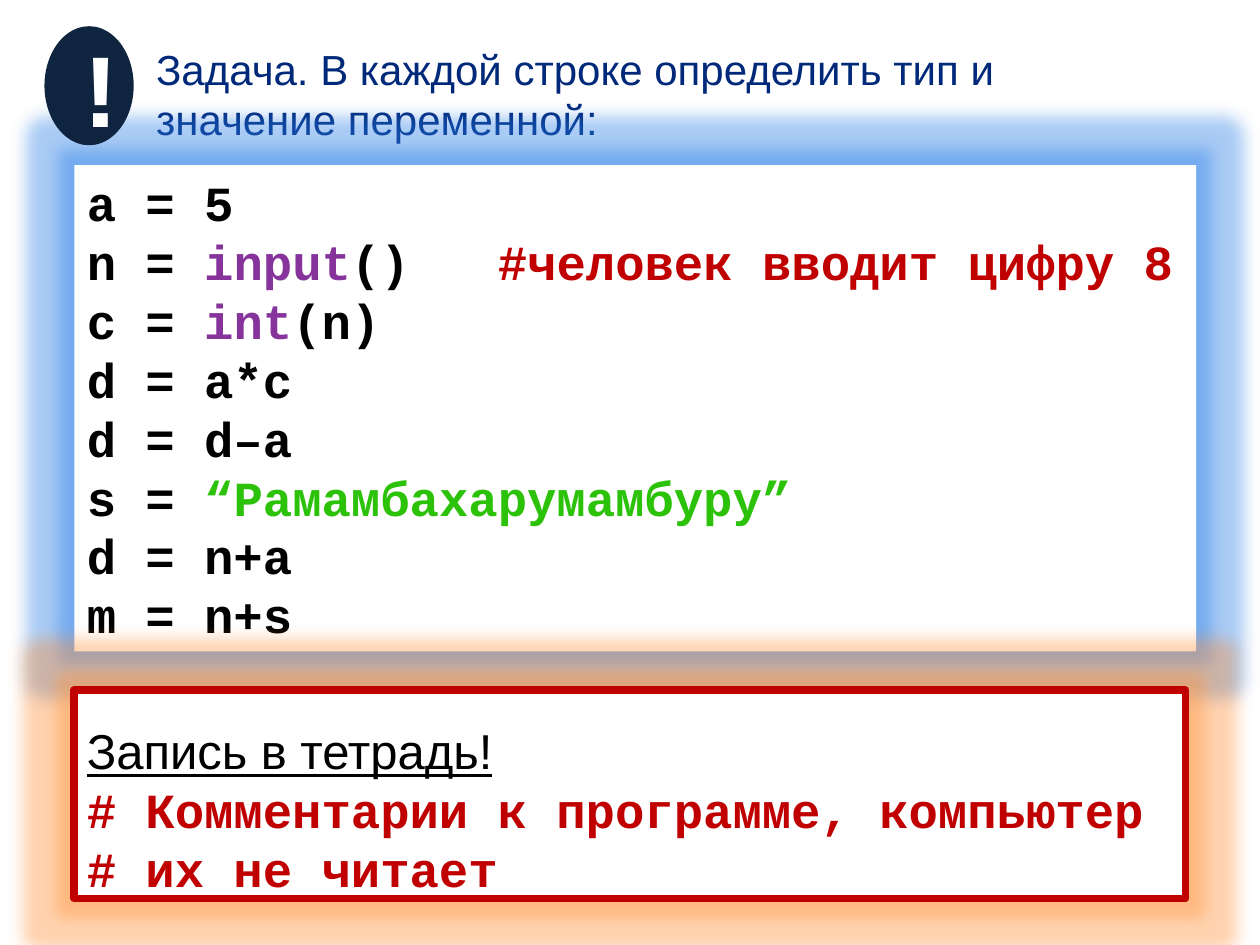
from lxml import etree
from pptx import Presentation
from pptx.dml.color import RGBColor
from pptx.enum import shapes, text
from pptx.oxml import ns
from pptx.util import Pt

# Content
TITLE = "Задача. В каждой строке определить тип и значение переменной:"
BLACK, PURPLE, RED, GREEN, WHITE = "000000", "86349C", "C00000", "2DC20A", "FFFFFF"
CODE = [
    [("a = 5", BLACK)],
    [("n = ", BLACK), ("input", PURPLE), ("()   ", BLACK),
     ("#человек вводит цифру 8", RED)],
    [("c = ", BLACK), ("int", PURPLE), ("(n)", BLACK)],
    [("d = a*c", BLACK)],
    [("d = d–a", BLACK)],
    [("s = ", BLACK), ("“Рамамбахарумамбуру”", GREEN)],
    [("d = n+a", BLACK)],
    [("m = n+s", BLACK)],
]
NOTE_HEADING = "Запись в тетрадь!"
NOTE_TEXT = "# Комментарии к программе, компьютер # их не читает"
SANS, MONO = "Arial", "Courier New"


def color(hex_value):
    return RGBColor.from_string(hex_value)


def set_font(paragraph, name, size, hex_value=None, bold=False):
    font = paragraph.font
    font.name, font.size, font.bold = name, Pt(size), bold
    if hex_value:
        font.color.rgb = color(hex_value)


def add_panel(kind, box, fill, line=None, glow=None):
    shape = slide.shapes.add_shape(kind, *map(Pt, box))
    shape.shadow.inherit = False
    shape.fill.solid()
    shape.fill.fore_color.rgb = color(fill)
    if line:
        shape.line.color.rgb = color(line)
        shape.line.width = Pt(4.5)
    else:
        shape.line.fill.background()
    if glow:
        effects = shape._element.spPr.find(ns.qn("a:effectLst"))
        halo = etree.SubElement(effects, ns.qn("a:glow"), rad=str(Pt(18)))
        tint = etree.SubElement(halo, ns.qn("a:srgbClr"), val=glow)
        etree.SubElement(tint, ns.qn("a:alpha"), val="40000")
    frame = shape.text_frame
    frame.word_wrap = True
    frame.vertical_anchor = text.MSO_ANCHOR.MIDDLE
    return frame


def next_paragraph(frame, index, alignment=text.PP_ALIGN.LEFT):
    paragraph = frame.add_paragraph() if index else frame.paragraphs[0]
    paragraph.alignment = alignment
    return paragraph


presentation = Presentation()
presentation.slide_width, presentation.slide_height = Pt(720), Pt(540)
slide = presentation.slides.add_slide(presentation.slide_layouts[5])

# Title
title = slide.shapes.title
title.left, title.top, title.width, title.height = map(Pt, (82, 21, 590, 65.5))
frame = title.text_frame
frame.text = TITLE
frame.word_wrap = True
frame.auto_size = text.MSO_AUTO_SIZE.SHAPE_TO_FIT_TEXT
frame.vertical_anchor = text.MSO_ANCHOR.TOP
frame.paragraphs[0].alignment = text.PP_ALIGN.LEFT
set_font(frame.paragraphs[0], SANS, 24, "00297A")

# Code panel
RECTANGLE = shapes.MSO_SHAPE.RECTANGLE
frame = add_panel(RECTANGLE, (42.5, 94.3, 641, 278), WHITE, glow="287DE6")
for index, code_line in enumerate(CODE):
    paragraph = next_paragraph(frame, index)
    set_font(paragraph, MONO, 28, bold=True)
    for words, hex_value in code_line:
        run = paragraph.add_run()
        run.text = words
        run.font.color.rgb = color(hex_value)

# Notebook panel
frame = add_panel(RECTANGLE, (42.5, 394.5, 635, 119), WHITE, RED, glow="FF9139")
heading = next_paragraph(frame, 0)
heading.text = NOTE_HEADING
heading.line_spacing = 1.5
set_font(heading, SANS, 28, BLACK)
heading.font.underline = True
note = next_paragraph(frame, 1)
note.text = NOTE_TEXT
set_font(note, MONO, 28, RED, bold=True)

# Exclamation badge
frame = add_panel(shapes.MSO_SHAPE.OVAL, (25.4, 15, 51, 68), "0F243E")
mark = next_paragraph(frame, 0, text.PP_ALIGN.CENTER)
mark.text = "!"
set_font(mark, MONO, 60, WHITE, bold=True)

presentation.save("out.pptx")
